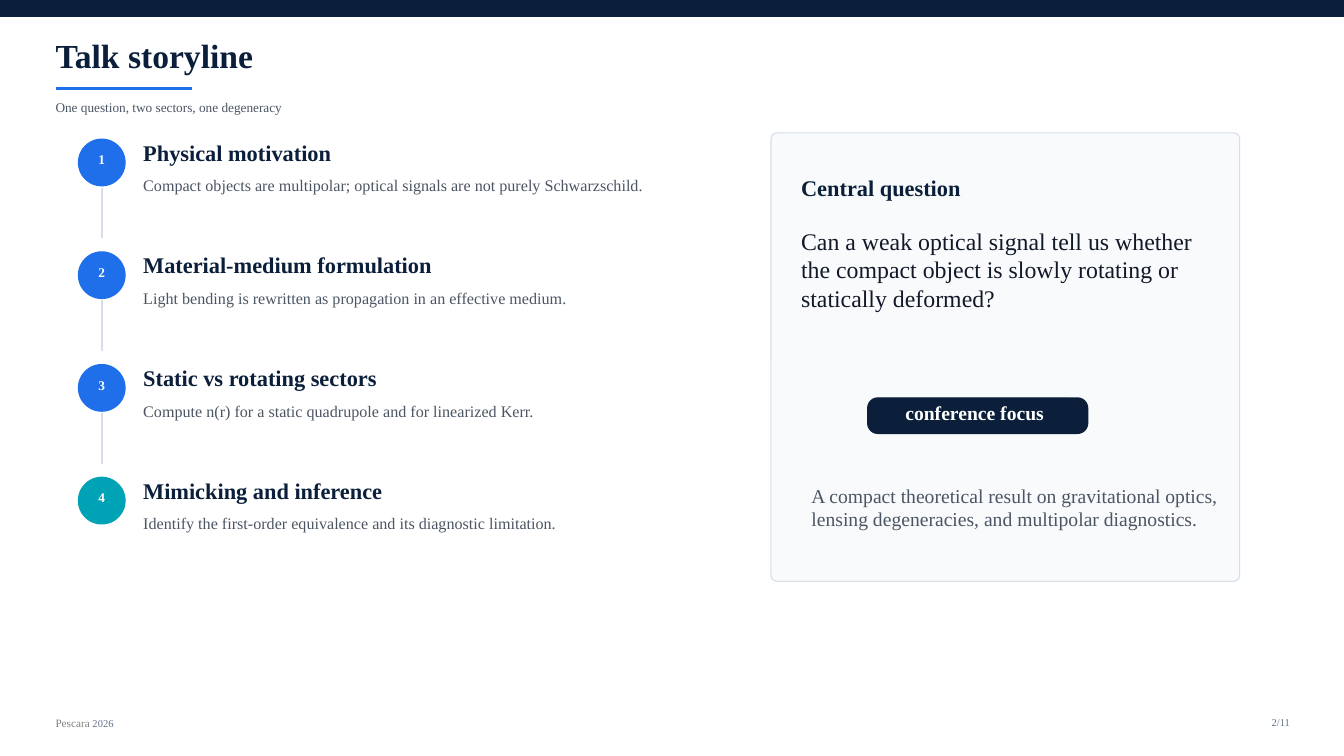
"""Build the talk storyline slide: four numbered steps beside a question card."""
from lxml import etree
from pptx import Presentation
from pptx.dml.color import RGBColor
from pptx.enum.shapes import MSO_CONNECTOR, MSO_SHAPE
from pptx.enum.text import MSO_ANCHOR, PP_ALIGN
from pptx.oxml.ns import qn
from pptx.util import Cm, Pt

RECT, ROUND, OVAL = MSO_SHAPE.RECTANGLE, MSO_SHAPE.ROUNDED_RECTANGLE, MSO_SHAPE.OVAL
STRAIGHT = MSO_CONNECTOR.STRAIGHT
MIDDLE = MSO_ANCHOR.MIDDLE
LEFT, CENTER, RIGHT = PP_ALIGN.LEFT, PP_ALIGN.CENTER, PP_ALIGN.RIGHT

TITLE = "Talk storyline"
SUBTITLE = "One question, two sectors, one degeneracy"
STEPS = [
    ("Physical motivation",
     "Compact objects are multipolar; optical signals are not purely Schwarzschild.", "blue"),
    ("Material-medium formulation",
     "Light bending is rewritten as propagation in an effective medium.", "blue"),
    ("Static vs rotating sectors",
     "Compute n(r) for a static quadrupole and for linearized Kerr.", "blue"),
    ("Mimicking and inference",
     "Identify the first-order equivalence and its diagnostic limitation.", "teal"),
]
CARD_HEADING = "Central question"
QUESTION = ("Can a weak optical signal tell us whether the compact object "
            "is slowly rotating or statically deformed?")
BADGE = "conference focus"
SUMMARY = ("A compact theoretical result on gravitational optics, "
           "lensing degeneracies, and multipolar diagnostics.")
PLACE, YEAR, PAGE = "Pescara", " 2026", "2/11"

THEME = {
    "font": "Times New Roman",
    "color": {"navy": "0B1F3A", "blue": "1F6FEB", "teal": "00A3B5", "body": "4B5563",
              "ink": "111827", "card": "F8FAFC", "rule": "D8DEE9", "white": "FFFFFF",
              "gray": "808080", "slate": "64748B"},
    "size": {"title": 24, "question": 17, "heading": 16, "summary": 14,
             "step": 11.5, "small": 9.5, "place": 8, "footer": 7.5},
}

SLIDE_W, SLIDE_H = 33.87, 19.05
MARGIN = 1.4
STEP_TOP, STEP_PITCH = 3.51, 2.84
DOT_LEFT, DOT = 1.98, 1.17
LINK_GAP, LINK_LEN = 1.22, 1.27
STEP_TEXT = 3.61
CARD_LEFT, CARD_TOP, CARD_W, CARD_H = 19.43, 3.35, 11.81, 11.3
CARD_TEXT = CARD_LEFT + 0.76
FOOTER_TOP, FOOTER_H = 17.98, 0.46


def color(name):
    return RGBColor.from_string(THEME["color"][name])


def style(font, size, ink, bold=False):
    font.name = THEME["font"]
    font.size = Pt(THEME["size"][size])
    font.color.rgb = color(ink)
    font.bold = bold


def write(shape, text, size, ink, bold=False, align=LEFT, right=0, bottom=0):
    tf = shape.text_frame
    tf.word_wrap = True
    tf.vertical_anchor = MIDDLE
    tf.margin_left = tf.margin_top = 0
    tf.margin_right, tf.margin_bottom = Cm(right), Cm(bottom)
    p = tf.paragraphs[0]
    p.add_run().text = text
    p.alignment = align
    style(p.font, size, ink, bold)
    return p


def add_text(s, box, text, size, ink, bold=False, align=LEFT):
    tb = s.shapes.add_textbox(*map(Cm, box))
    return write(tb, text, size, ink, bold, align)


def add_block(s, kind, box, fill, line, width=1, radius=None):
    sp = s.shapes.add_shape(kind, *map(Cm, box))
    sp.shadow.inherit = False
    sp.fill.solid()
    sp.fill.fore_color.rgb = color(fill)
    sp.line.color.rgb = color(line)
    sp.line.width = Pt(width)
    if radius is not None:
        sp.adjustments[0] = radius
    return sp


def add_line(s, ends, ink, width):
    cx = s.shapes.add_connector(STRAIGHT, *map(Cm, ends))
    cx.line.color.rgb = color(ink)
    cx.line.width = Pt(width)
    etree.SubElement(cx.element.spPr, qn("a:effectLst"))


def add_header(s):
    add_block(s, RECT, (0, 0, SLIDE_W, 0.41), "navy", "navy")
    add_text(s, (MARGIN, 0.86, 18.8, 1.07), TITLE, "title", "navy", True)
    add_line(s, (MARGIN, 2.24, MARGIN + 3.43, 2.24), "blue", 2)
    add_text(s, (MARGIN, 2.46, 19.05, 0.46), SUBTITLE, "small", "body")


def add_steps(s):
    for i, (heading, detail, fill) in enumerate(STEPS):
        top = STEP_TOP + i * STEP_PITCH
        dot = add_block(s, OVAL, (DOT_LEFT, top, DOT, DOT), fill, fill)
        write(dot, str(i + 1), "small", "white", True, CENTER, bottom=0.15)
        add_text(s, (STEP_TEXT, top - 0.03, 8.89, 0.71), heading, "heading", "navy", True)
        add_text(s, (STEP_TEXT, top + 0.84, 14.99, 0.64), detail, "step", "body")
        if i < len(STEPS) - 1:
            x, y = DOT_LEFT + DOT / 2, top + LINK_GAP
            add_line(s, (x, y, x, y + LINK_LEN), "rule", 1.3)


def add_card(s):
    add_block(s, ROUND, (CARD_LEFT, CARD_TOP, CARD_W, CARD_H), "card", "rule", 0.8, 0.013)
    add_text(s, (CARD_TEXT, 4.39, 6.1, 0.69), CARD_HEADING, "heading", "navy", True)
    add_text(s, (CARD_TEXT, 5.64, 10.03, 2.29), QUESTION, "question", "ink")
    badge = add_block(s, ROUND, (21.87, 10.03, 5.54, 0.89), "navy", "navy", radius=0.286)
    write(badge, BADGE, "summary", "white", True, CENTER, right=0.15, bottom=0.13)
    add_text(s, (CARD_TEXT + 0.26, 11.96, 10.54, 1.65), SUMMARY, "summary", "body")


def add_footer(s):
    p = add_text(s, (MARGIN, FOOTER_TOP, 14.48, FOOTER_H), PLACE, "place", "gray")
    r = p.add_run()
    r.text = YEAR
    style(r.font, "footer", "slate")
    add_text(s, (31.37, FOOTER_TOP, 1.14, FOOTER_H), PAGE, "footer", "slate", align=RIGHT)


def main():
    prs = Presentation()
    prs.slide_width, prs.slide_height = Cm(SLIDE_W), Cm(SLIDE_H)
    s = prs.slides.add_slide(prs.slide_layouts[6])
    add_header(s)
    add_steps(s)
    add_card(s)
    add_footer(s)
    prs.save("out.pptx")


if __name__ == "__main__":
    main()
